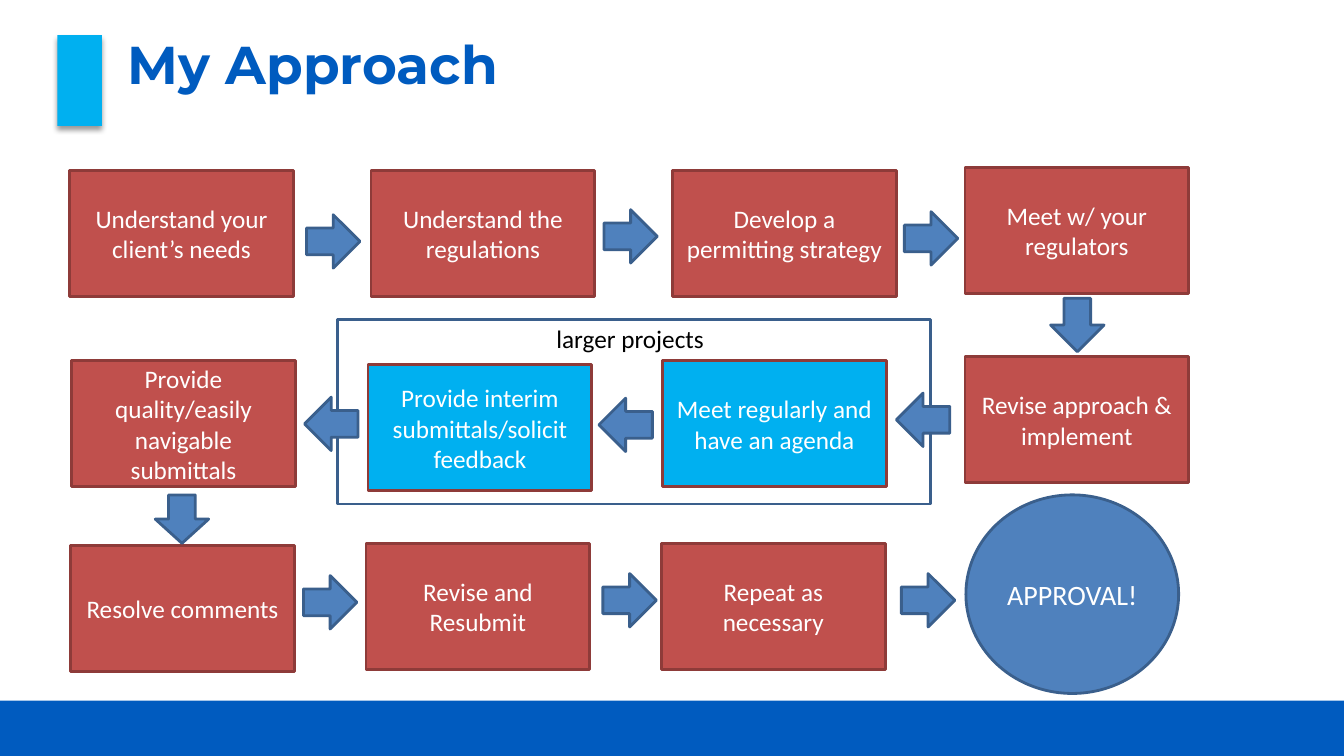
from lxml import etree
from pptx import Presentation
from pptx.dml.color import RGBColor as RGB
from pptx.enum.shapes import MSO_SHAPE as Shape
from pptx.enum.text import MSO_ANCHOR as Anchor, PP_ALIGN as Align
from pptx.oxml import parse_xml
from pptx.util import Inches, Pt

HEX = {
    "navy": "005BBF", "sky": "00B0F0", "red": "C0504D", "rust": "8E3B39",
    "blue": "4F81BD", "slate": "3A5F8C", "white": "FFFFFF", "black": "000000",
}
COLOR = {name: RGB.from_string(code) for name, code in HEX.items()}

deck = Presentation()
deck.slide_width = Inches(13.33)
deck.slide_height = Inches(7.5)
slide = deck.slides.add_slide(deck.slide_layouts[6])
shapes = slide.shapes


def draw(kind, left, top, width, height, fill=None, line=None):
    shape = shapes.add_shape(kind, Inches(left), Inches(top), Inches(width), Inches(height))
    shape.shadow.inherit = False
    if fill:
        shape.fill.solid()
        shape.fill.fore_color.rgb = COLOR[fill]
    else:
        shape.fill.background()
    if line:
        shape.line.color.rgb = COLOR[line]
        shape.line.width = Pt(2)
    else:
        shape.line.fill.background()
    return shape


def write(shape, text, size, color, font="Calibri", align=Align.CENTER, anchor=Anchor.MIDDLE):
    frame = shape.text_frame
    frame.word_wrap = True
    frame.vertical_anchor = anchor
    frame.text = text
    par = frame.paragraphs[0]
    par.alignment = align
    run = par.runs[0]
    run.font.size = Pt(size)
    run.font.name = font
    run.font.color.rgb = COLOR[color]
    return run


draw(Shape.RECTANGLE, 0, 6.95, 13.33, 0.55, "navy")

title = shapes.add_textbox(Inches(1.17), Inches(0), Inches(11.5), Inches(1.25))
write(title, "My Approach", 38, "navy", "Montserrat", Align.LEFT).font.bold = True

accent = draw(Shape.RECTANGLE, 0.57, 0.35, 0.44, 0.9, "sky")
effects = accent._element.spPr.find("{*}effectLst")
effects.append(parse_xml(
    '<a:outerShdw xmlns:a="http://schemas.openxmlformats.org/drawingml/2006/main" '
    'blurRad="50800" dist="38100" dir="5400000" algn="t" rotWithShape="0">'
    '<a:srgbClr val="000000"><a:alpha val="40000"/></a:srgbClr></a:outerShdw>'))

steps = [
    ("Understand your client’s needs", 0.69, 1.69, "red"),
    ("Understand the regulations", 3.68, 1.69, "red"),
    ("Develop a permitting strategy", 6.67, 1.69, "red"),
    ("Meet w/ your regulators", 9.57, 1.66, "red"),
    ("Revise approach & implement", 9.57, 3.54, "red"),
    ("Meet regularly and have an agenda", 6.57, 3.58, "sky"),
    ("Provide interim submittals/solicit feedback", 3.65, 3.62, "sky"),
    ("Provide quality/easily navigable submittals", 0.71, 3.58, "red"),
    ("Resolve comments", 0.7, 5.41, "red"),
    ("Revise and Resubmit", 3.63, 5.39, "red"),
    ("Repeat as necessary", 6.56, 5.39, "red"),
]
for text, left, top, fill in steps:
    box = draw(Shape.FLOWCHART_PROCESS, left, top, 2.22, 1.25, fill, "rust")
    write(box, text, 18, "white")

label = shapes.add_textbox(Inches(5.42), Inches(3.16), Inches(1.75), Inches(0.4))
write(label, "larger projects", 18, "black", align=Align.LEFT, anchor=Anchor.TOP)
draw(Shape.FLOWCHART_PROCESS, 3.35, 3.17, 5.88, 1.83, line="slate")

arrows = {
    270: [(3.04, 2.13), (5.99, 2.08), (8.97, 2.1), (3.01, 5.71), (5.98, 5.69), (8.94, 5.69)],
    90: [(3.02, 3.94), (5.94, 3.95), (8.89, 3.9)],
    0: [(10.42, 2.96), (1.54, 4.91)],
}
for turn, spots in arrows.items():
    for left, top in spots:
        height = 0.48 if top == 4.91 else 0.53
        arrow = draw(Shape.DOWN_ARROW, left, top, 0.53, height, "blue", "slate")
        arrow.rotation = turn

goal = draw(Shape.FLOWCHART_CONNECTOR, 9.58, 4.91, 2.11, 1.97, "blue", "slate")
write(goal, "APPROVAL!", 20, "white")

deck.save("out.pptx")
